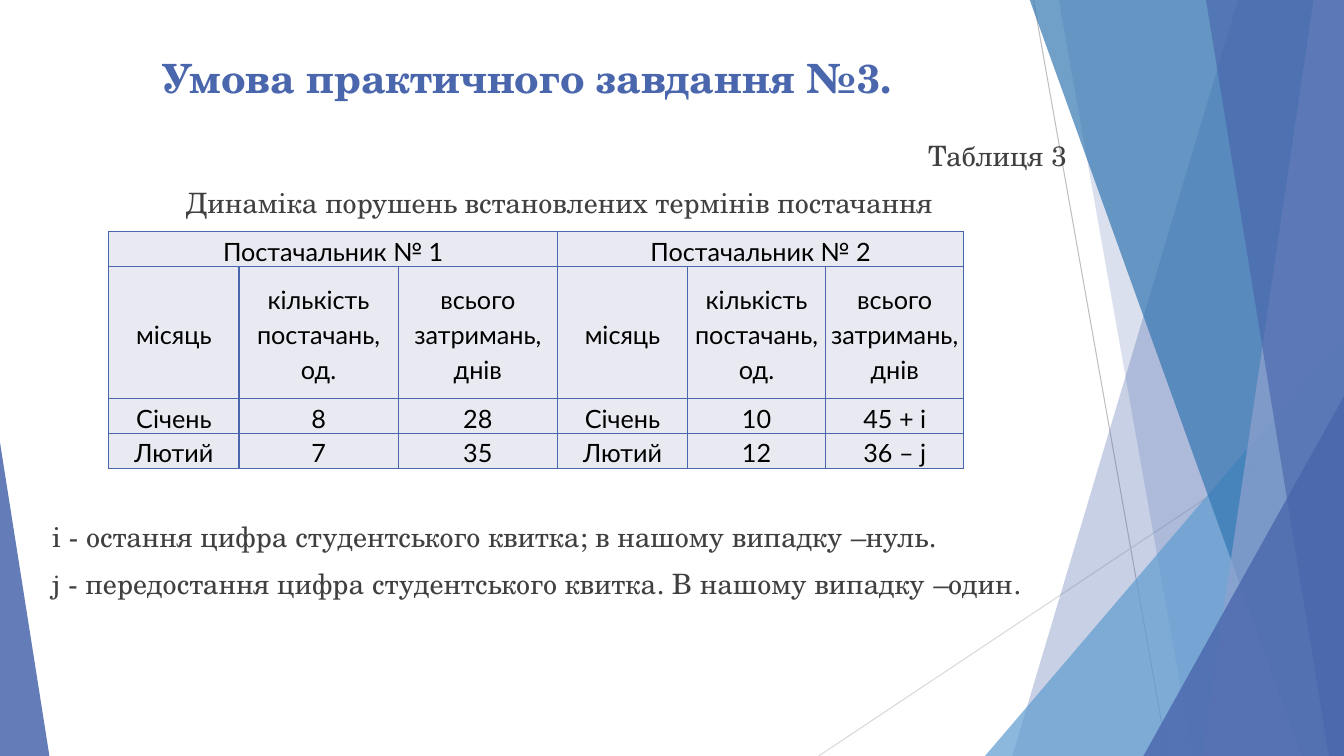
import pptx
import pptx.dml.color
import pptx.enum.shapes
import pptx.enum.text
import pptx.oxml
import pptx.oxml.ns
import pptx.util
from pptx.util import Inches

RGBColor = pptx.dml.color.RGBColor
ALIGN = pptx.enum.text.PP_ALIGN
MIDDLE = pptx.enum.text.MSO_ANCHOR.MIDDLE

INDIGO = RGBColor(0x4A, 0x66, 0xAC)
SKY = RGBColor(0x62, 0x9D, 0xD1)
BLUE = RGBColor(0x34, 0x77, 0xB2)
LAVENDER = RGBColor(0x90, 0xA2, 0xCF)
CELL_TINT = RGBColor(0xE9, 0xEA, 0xF1)
DARK_GREY = RGBColor(0x40, 0x40, 0x40)
MID_GREY = RGBColor(0xBF, 0xBF, 0xBF)
LIGHT_GREY = RGBColor(0xD9, 0xD9, 0xD9)
BLACK = RGBColor(0, 0, 0)

WIDTH, HEIGHT, BLEED = 13.33, 7.5, -0.01


class SlideBuilder:
    serif = "TeX Gyre Schola"
    sans = "Lato"

    def __init__(self, slide):
        self.slide = slide
        self.shapes = slide.shapes

    def format_runs(self, paragraph, font, size, color, bold=False):
        for run in paragraph.runs:
            run.font.name = font
            run.font.size = pptx.util.Pt(size)
            run.font.color.rgb = color
            run.font.bold = bold

    def title(self, text, box):
        heading = self.shapes.title
        heading.left, heading.top, heading.width, heading.height = map(Inches, box)
        frame = heading.text_frame
        frame.text = text
        frame.word_wrap = True
        frame.vertical_anchor = MIDDLE
        frame.paragraphs[0].alignment = ALIGN.LEFT
        self.format_runs(frame.paragraphs[0], self.serif, 28.8, INDIGO, True)

    def text(self, lines, box):
        frame = self.shapes.add_textbox(*map(Inches, box)).text_frame
        frame.word_wrap = True
        frame.text = "\n".join(line for line, _ in lines)
        for index, (paragraph, (_, alignment)) in enumerate(zip(frame.paragraphs, lines)):
            paragraph.alignment = alignment
            paragraph.space_before = pptx.util.Pt(10 if index else 0)
            self.format_runs(paragraph, self.serif, 20, DARK_GREY)

    def line(self, start, end, color):
        ray = self.shapes.add_connector(
            pptx.enum.shapes.MSO_CONNECTOR.STRAIGHT, *map(Inches, start + end))
        ray.line.color.rgb = color
        ray.line.width = pptx.util.Pt(0.75)
        ray._element.spPr.append(pptx.oxml.parse_xml(
            f'<a:effectLst {pptx.oxml.ns.nsdecls("a")}/>'))

    def paint(self, shape, color, opacity):
        shape.shadow.inherit = False
        shape.line.fill.background()
        shape.fill.solid()
        shape.fill.fore_color.rgb = color
        tint = shape._element.spPr.find(".//" + pptx.oxml.ns.qn("a:srgbClr"))
        tint.append(pptx.oxml.parse_xml(
            f'<a:alpha {pptx.oxml.ns.nsdecls("a")} val="{opacity * 1000}"/>'))

    def band(self, top_x, bottom_x, color, opacity):
        corners = [(top_x, BLEED), (WIDTH, BLEED), (WIDTH, HEIGHT), (bottom_x, HEIGHT)]
        first, *rest = [(Inches(x), Inches(y)) for x, y in corners]
        outline = self.shapes.build_freeform(*first)
        outline.add_line_segments(rest, close=True)
        self.paint(outline.convert_to_shape(), color, opacity)

    def triangle(self, box, apex, color, opacity):
        corner = self.shapes.add_shape(
            pptx.enum.shapes.MSO_SHAPE.ISOSCELES_TRIANGLE, *map(Inches, box))
        corner.adjustments[0] = apex
        self.paint(corner, color, opacity)

    def style_cell(self, cell):
        cell.fill.solid()
        cell.fill.fore_color.rgb = CELL_TINT
        cell.vertical_anchor = MIDDLE
        cell.margin_left = cell.margin_right = Inches(0.03)
        cell.margin_top = cell.margin_bottom = 0
        for paragraph in cell.text_frame.paragraphs:
            paragraph.alignment = ALIGN.CENTER
            paragraph.line_spacing = 1.15
            self.format_runs(paragraph, self.sans, 18, BLACK)
        properties = cell._tc.get_or_add_tcPr()
        for index, side in enumerate("LRTB"):
            properties.insert(index, pptx.oxml.parse_xml(
                f'<a:ln{side} {pptx.oxml.ns.nsdecls("a")} w="12700"><a:solidFill>'
                f'<a:srgbClr val="{INDIGO}"/></a:solidFill></a:ln{side}>'))

    def table(self, rows, left, top, widths, heights, merges):
        grid = self.shapes.add_table(
            len(rows), len(widths), Inches(left), Inches(top),
            Inches(sum(widths)), Inches(sum(heights))).table
        grid.first_row = grid.horz_banding = False
        for column, width in zip(grid.columns, widths):
            column.width = Inches(width)
        for row, height, values in zip(grid.rows, heights, rows):
            row.height = Inches(height)
            for cell, value in zip(row.cells, values):
                cell.text_frame.text = value
                self.style_cell(cell)
        for row, first, last in merges:
            grid.cell(row, first).merge(grid.cell(row, last))


def main():
    deck = pptx.Presentation()
    deck.slide_width, deck.slide_height = Inches(WIDTH), Inches(HEIGHT)
    page = SlideBuilder(deck.slides.add_slide(deck.slide_layouts[5]))

    page.line((10.25, 0), (11.58, HEIGHT), MID_GREY)
    page.line((WIDTH, 4.03), (8.12, HEIGHT), LIGHT_GREY)
    page.band(12.28, 10.04, INDIGO, 30)
    page.band(10.5, 11.83, INDIGO, 20)
    page.triangle((9.77, 3.33, 3.56, 4.17), 1, SKY, 72)
    page.band(10.21, 12.91, BLUE, 70)
    page.band(13.03, 11.92, LAVENDER, 70)
    page.band(11.96, 13.18, INDIGO, 65)
    page.triangle((11.34, 3.93, 1.99, 3.57), 1, INDIGO, 80)
    page.triangle((0, 4.39, 0.49, 3.11), 0, INDIGO, 85)

    page.title("Умова практичного завдання №3.", (1.51, 0.43, 7.62, 0.67))
    page.text([
        ("Таблиця 3", ALIGN.RIGHT),
        ("Динаміка порушень встановлених термінів постачання", ALIGN.CENTER),
    ], (0.42, 1.32, 10.26, 0.9))

    supplier_header = ["місяць", "кількість постачань, од.", "всього затримань, днів"]
    page.table([
        ["Постачальник № 1", "", "", "Постачальник № 2", "", ""],
        supplier_header * 2,
        ["Січень", "8", "28", "Січень", "10", "45 + і"],
        ["Лютий", "7", "35", "Лютий", "12", "36 – j"],
    ], 1.08, 2.3, [1.29, 1.58, 1.58, 1.29, 1.37, 1.37], [0.31, 1.31, 0.31, 0.31],
        [(0, 0, 2), (0, 3, 5)])

    page.text([
        ("і - остання цифра студентського квитка; в нашому випадку –нуль.", ALIGN.LEFT),
        ("j - передостання цифра студентського квитка. В нашому випадку –один.", ALIGN.LEFT),
    ], (0.42, 5.1, 10.26, 0.9))

    deck.save("out.pptx")


if __name__ == "__main__":
    main()
